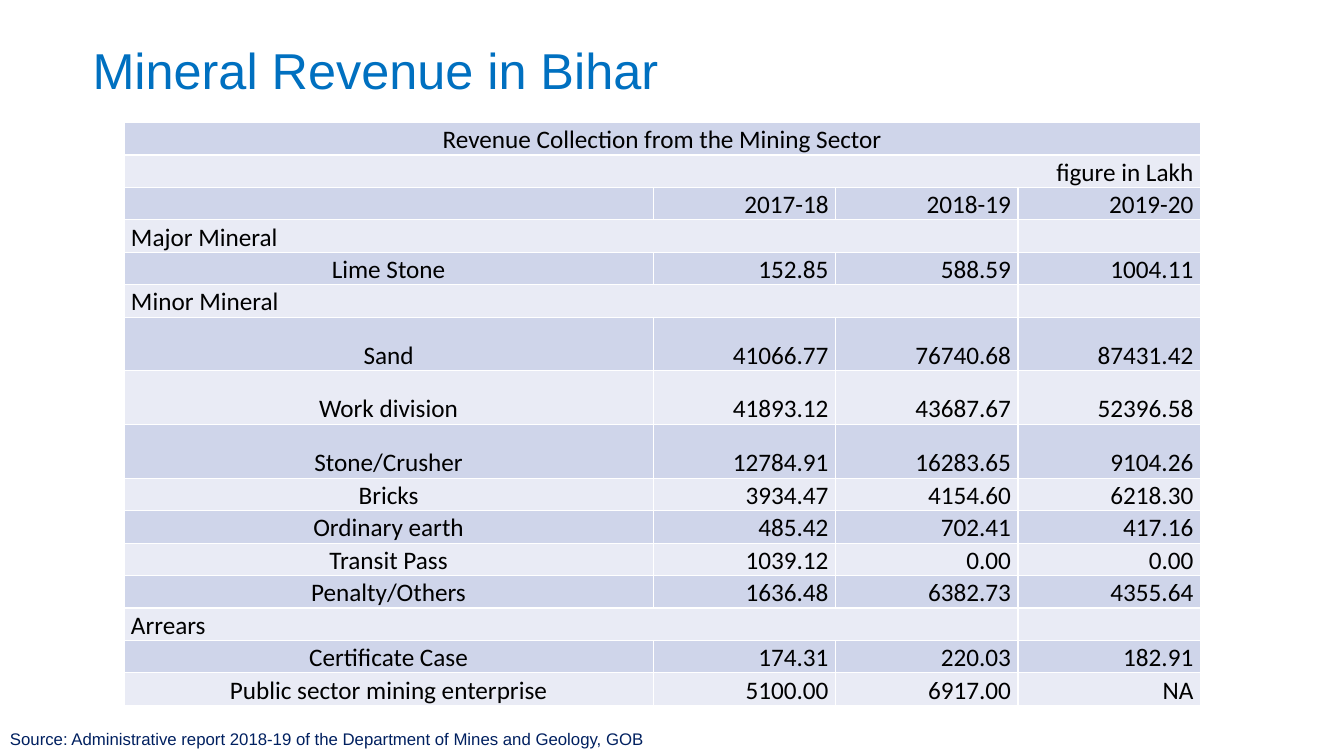
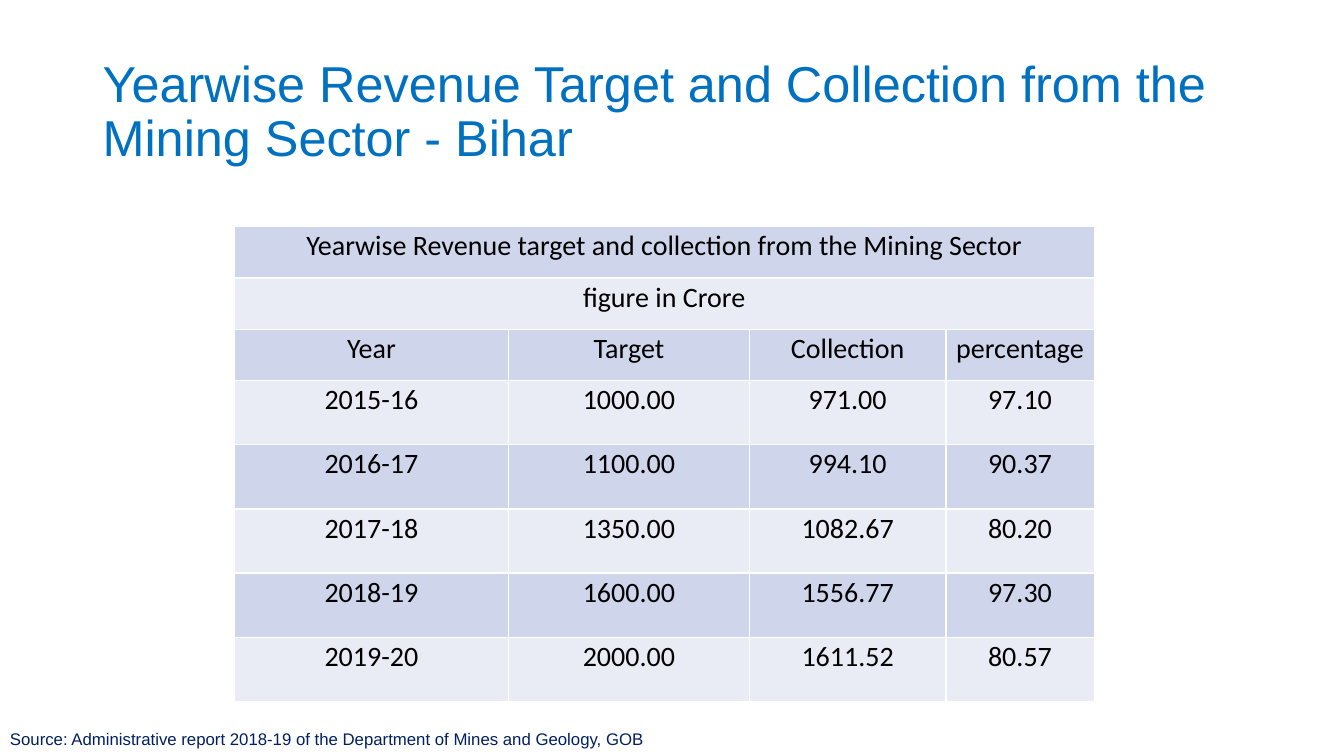
from dataclasses import dataclass

from lxml import etree
from pptx import Presentation
from pptx.dml.color import RGBColor
from pptx.enum.text import MSO_ANCHOR, PP_ALIGN
from pptx.oxml.ns import qn
from pptx.slide import Slide
from pptx.table import _Cell
from pptx.text.text import _Paragraph
from pptx.util import Emu, Inches, Pt

LEFT, CENTER, RIGHT = PP_ALIGN.LEFT, PP_ALIGN.CENTER, PP_ALIGN.RIGHT
TOP, MIDDLE, BOTTOM = MSO_ANCHOR.TOP, MSO_ANCHOR.MIDDLE, MSO_ANCHOR.BOTTOM

SLIDE_WIDTH, SLIDE_HEIGHT = Inches(40 / 3), Inches(7.5)
GRID_COLUMNS = 160
GRID_UNIT = SLIDE_WIDTH / GRID_COLUMNS


@dataclass(frozen=True)
class TextStyle:
    font: str
    size: float
    color: str
    line_spacing: float = 1.0
    space_after: float = 0


@dataclass(frozen=True)
class Theme:
    title: TextStyle = TextStyle("Arial", 36, "0070C0", 0.9)
    source: TextStyle = TextStyle("Arial", 12, "002060")
    dense_table: TextStyle = TextStyle("Calibri", 18, "000000", 1.07)
    open_table: TextStyle = TextStyle("Calibri", 20, "000000", 1.07, 8)
    bands: tuple[str, str] = ("CFD5EA", "E9EBF5")
    border: str = "FFFFFF"
    border_width: float = 1
    cell_margin: float = 0.07


THEME = Theme()


@dataclass(frozen=True)
class Area:
    column: float
    row: float
    columns: float
    rows: float


@dataclass(frozen=True)
class Row:
    texts: tuple[str, ...]
    height: float
    aligns: tuple[PP_ALIGN, ...]
    span: int = 1


@dataclass(frozen=True)
class TableBlock:
    column: float
    row: float
    widths: tuple[float, ...]
    rows: tuple[Row, ...]
    style: TextStyle
    anchor: MSO_ANCHOR


@dataclass(frozen=True)
class Page:
    title: str
    title_area: Area
    table: TableBlock


SOURCE = "Source: Administrative report 2018-19 of the Department of Mines and Geology, GOB"
SOURCE_AREA = Area(0, 86.16, 80, 3.6)
LOW, HIGH = 3.86, 6.4
HEADER, YEAR = 6.11, 7.64


def banner(text: str, height: float, align: PP_ALIGN) -> Row:
    return Row((text,), height, (align,), 4)


def group(text: str) -> Row:
    return Row((text,), LOW, (LEFT,), 3)


def mineral(*texts: str, height: float = LOW) -> Row:
    return Row(texts, height, (CENTER, RIGHT, RIGHT, RIGHT))


def yearly(*texts: str, height: float = YEAR) -> Row:
    return Row(texts, height, (CENTER,) * 4)


MINERAL_ROWS = (
    banner("Revenue Collection from the Mining Sector", LOW, CENTER),
    banner("figure in Lakh", LOW, RIGHT),
    mineral("", "2017-18", "2018-19", "2019-20"),
    group("Major Mineral"),
    mineral("Lime Stone", "152.85", "588.59", "1004.11"),
    group("Minor Mineral"),
    mineral("Sand", "41066.77", "76740.68", "87431.42", height=HIGH),
    mineral("Work division", "41893.12", "43687.67", "52396.58", height=HIGH),
    mineral("Stone/Crusher", "12784.91", "16283.65", "9104.26", height=HIGH),
    mineral("Bricks", "3934.47", "4154.60", "6218.30"),
    mineral("Ordinary earth", "485.42", "702.41", "417.16"),
    mineral("Transit Pass", "1039.12", "0.00", "0.00"),
    mineral("Penalty/Others", "1636.48", "6382.73", "4355.64"),
    group("Arrears"),
    mineral("Certificate Case", "174.31", "220.03", "182.91"),
    mineral("Public sector mining enterprise", "5100.00", "6917.00", "NA"),
)

YEARLY_ROWS = (
    banner("Yearwise Revenue target and collection from the Mining Sector", HEADER, CENTER),
    banner("figure in Crore", HEADER, CENTER),
    yearly("Year", "Target", "Collection", "percentage", height=HEADER),
    yearly("2015-16", "1000.00", "971.00", "97.10"),
    yearly("2016-17", "1100.00", "994.10", "90.37"),
    yearly("2017-18", "1350.00", "1082.67", "80.20"),
    yearly("2018-19", "1600.00", "1556.77", "97.30"),
    yearly("2019-20", "2000.00", "1611.52", "80.57"),
)

PAGES = (
    Page(
        "Mineral Revenue in Bihar",
        Area(9.84, 0, 138, 17.4),
        TableBlock(14.76, 14.6, (63, 21.72, 21.72, 21.72), MINERAL_ROWS,
                   THEME.dense_table, BOTTOM),
    ),
    Page(
        "Yearwise Revenue Target and Collection from the Mining Sector - Bihar",
        Area(11.04, 4.8, 138, 17.4),
        TableBlock(27.9, 26.98, (32.64, 28.68, 23.4, 17.64), YEARLY_ROWS,
                   THEME.open_table, TOP),
    ),
)


def grid(cells: float) -> Emu:
    return Emu(round(cells * GRID_UNIT))


def style_paragraph(para: _Paragraph, style: TextStyle, align: PP_ALIGN) -> None:
    para.alignment = align
    para.line_spacing = style.line_spacing
    para.space_after = Pt(style.space_after)
    para.font.name = style.font
    para.font.size = Pt(style.size)
    para.font.color.rgb = RGBColor.from_string(style.color)


def add_text(slide: Slide, text: str, area: Area, style: TextStyle, anchor: MSO_ANCHOR) -> None:
    box = slide.shapes.add_textbox(
        grid(area.column), grid(area.row), grid(area.columns), grid(area.rows))
    frame = box.text_frame
    frame.word_wrap = True
    frame.vertical_anchor = anchor
    frame.text = text
    style_paragraph(frame.paragraphs[0], style, LEFT)


def add_borders(cell: _Cell) -> None:
    properties = cell._tc.get_or_add_tcPr()
    for position, side in enumerate(("a:lnL", "a:lnR", "a:lnT", "a:lnB")):
        line = etree.Element(qn(side), w=str(Pt(THEME.border_width)))
        fill = etree.SubElement(line, qn("a:solidFill"))
        etree.SubElement(fill, qn("a:srgbClr"), val=THEME.border)
        properties.insert(position, line)


def style_cell(cell: _Cell, band: str, anchor: MSO_ANCHOR) -> None:
    cell.fill.solid()
    cell.fill.fore_color.rgb = RGBColor.from_string(band)
    cell.vertical_anchor = anchor
    cell.margin_left = cell.margin_right = Inches(THEME.cell_margin)
    cell.margin_top = cell.margin_bottom = 0
    add_borders(cell)


def add_table(slide: Slide, block: TableBlock) -> None:
    height = sum(row.height for row in block.rows)
    table = slide.shapes.add_table(
        len(block.rows), len(block.widths), grid(block.column), grid(block.row),
        grid(sum(block.widths)), grid(height)).table
    table.first_row = table.horz_banding = False
    for column, width in zip(table.columns, block.widths):
        column.width = grid(width)
    for index, row in enumerate(block.rows):
        table.rows[index].height = grid(row.height)
        cells = list(table.rows[index].cells)
        for cell in cells:
            style_cell(cell, THEME.bands[index % 2], block.anchor)
            style_paragraph(cell.text_frame.paragraphs[0], block.style, LEFT)
        for cell, text, align in zip(cells, row.texts, row.aligns):
            cell.text_frame.text = text
            style_paragraph(cell.text_frame.paragraphs[0], block.style, align)
        if row.span > 1:
            cells[0].merge(cells[row.span - 1])


def main() -> None:
    deck = Presentation()
    deck.slide_width, deck.slide_height = SLIDE_WIDTH, SLIDE_HEIGHT
    blank = deck.slide_layouts[6]
    for page in PAGES:
        slide = deck.slides.add_slide(blank)
        add_text(slide, page.title, page.title_area, THEME.title, MIDDLE)
        add_table(slide, page.table)
        add_text(slide, SOURCE, SOURCE_AREA, THEME.source, TOP)
    deck.save("out.pptx")


if __name__ == "__main__":
    main()
